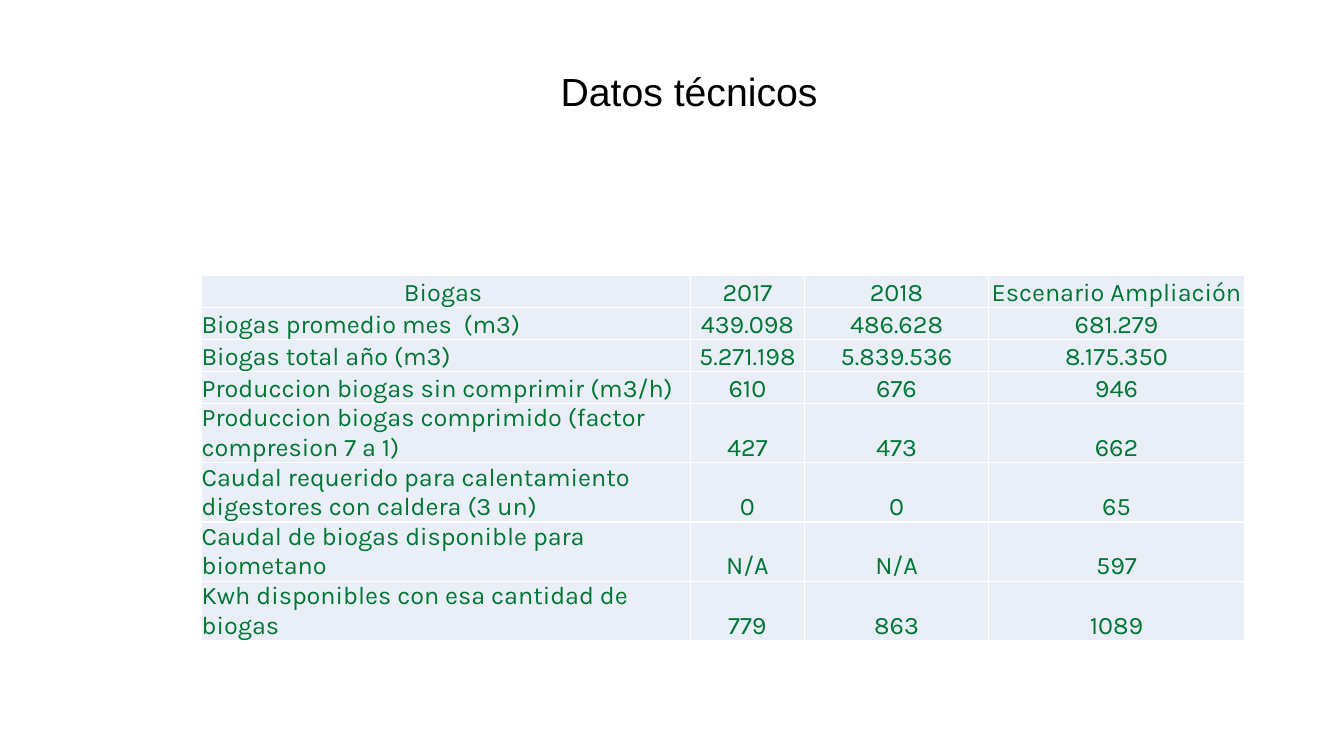
from pptx import Presentation
from pptx.dml.color import RGBColor
from pptx.enum.text import MSO_VERTICAL_ANCHOR as Anchor, PP_PARAGRAPH_ALIGNMENT as Align
from pptx.oxml import parse_xml
from pptx.oxml.ns import nsdecls
from pptx.util import Inches, Pt

BLACK = RGBColor(0x00, 0x00, 0x00)
WHITE = RGBColor(0xFF, 0xFF, 0xFF)
GREEN = RGBColor(0x00, 0x76, 0x35)
PALE_BLUE = RGBColor(0xEA, 0xEF, 0xF7)

GRID_COLUMNS, GRID_ROWS = 40, 24

BIOGAS_DATA = [
    ("Biogas ", "2017", "2018", "Escenario Ampliación"),
    ("Biogas promedio mes  (m3)", "439.098", "486.628", "681.279"),
    ("Biogas total año (m3)", "5.271.198", "5.839.536", "8.175.350"),
    ("Produccion biogas sin comprimir (m3/h)", "610", "676", "946"),
    ("Produccion biogas comprimido (factor compresion 7 a 1)", "427", "473", "662"),
    ("Caudal requerido para calentamiento digestores con caldera (3 un)", "0", "0", "65"),
    ("Caudal de biogas disponible para biometano", "N/A", "N/A", "597"),
    ("Kwh disponibles con esa cantidad de biogas", "779", "863", "1089"),
]
COLUMN_SPANS = [14.55, 3.39, 5.49, 7.6]
ROW_SPANS = [1.02] * 4 + [1.82, 1.76] + [1.02] * 2


class SlideBuilder:
    """Style and current slide; lengths are in grid columns and rows."""

    title_font, title_size = "Arial", Pt(28)
    table_font, table_size = "Karla", Pt(18)
    border_width = Pt(1)

    def __init__(self, deck):
        self.column = deck.slide_width / GRID_COLUMNS
        self.row = deck.slide_height / GRID_ROWS
        self.slide = deck.slides.add_slide(deck.slide_layouts[5])

    def across(self, columns):
        return round(columns * self.column)

    def down(self, rows):
        return round(rows * self.row)

    def add_text(self, paragraph, text, font_name, size, color, align):
        paragraph.alignment = align
        run = paragraph.add_run()
        run.text = text
        run.font.name, run.font.size = font_name, size
        run.font.color.rgb = color

    def title(self, text, left, top, width, height):
        heading = self.slide.shapes.title
        heading.left, heading.top = self.across(left), self.down(top)
        heading.width, heading.height = self.across(width), self.down(height)
        heading.text_frame.vertical_anchor = Anchor.MIDDLE
        self.add_text(heading.text_frame.paragraphs[0], text,
                      self.title_font, self.title_size, BLACK, Align.CENTER)

    def table(self, data, left, top, column_spans, row_spans):
        table = self.slide.shapes.add_table(
            len(data), len(column_spans), self.across(left), self.down(top),
            self.across(sum(column_spans)), self.down(sum(row_spans))).table
        table.first_row = table.horz_banding = False
        for column, span in zip(table.columns, column_spans):
            column.width = self.across(span)
        for row, span in zip(table.rows, row_spans):
            row.height = self.down(span)
        for r, values in enumerate(data):
            for c, value in enumerate(values):
                is_row_label = r > 0 and c == 0
                self.cell(table.cell(r, c), value,
                          Align.LEFT if is_row_label else Align.CENTER)

    def cell(self, cell, text, align):
        cell.margin_left = cell.margin_right = cell.margin_top = cell.margin_bottom = 0
        cell.vertical_anchor = Anchor.BOTTOM
        self.add_text(cell.text_frame.paragraphs[0], text,
                      self.table_font, self.table_size, GREEN, align)
        self.borders(cell)
        cell.fill.solid()
        cell.fill.fore_color.rgb = PALE_BLUE

    def borders(self, cell):
        properties = cell._tc.get_or_add_tcPr()
        for side in ("lnL", "lnR", "lnT", "lnB"):
            properties.append(parse_xml(
                f'<a:{side} {nsdecls("a")} w="{self.border_width}"><a:solidFill>'
                f'<a:srgbClr val="{WHITE}"/></a:solidFill></a:{side}>'))


def main():
    deck = Presentation()
    deck.slide_width, deck.slide_height = Inches(13.33), Inches(7.5)
    builder = SlideBuilder(deck)
    builder.title("Datos técnicos ", left=8.4, top=0.48, width=24.54, height=4.8)
    builder.table(BIOGAS_DATA, left=6, top=8.74,
                  column_spans=COLUMN_SPANS, row_spans=ROW_SPANS)
    deck.save("out.pptx")


if __name__ == "__main__":
    main()
